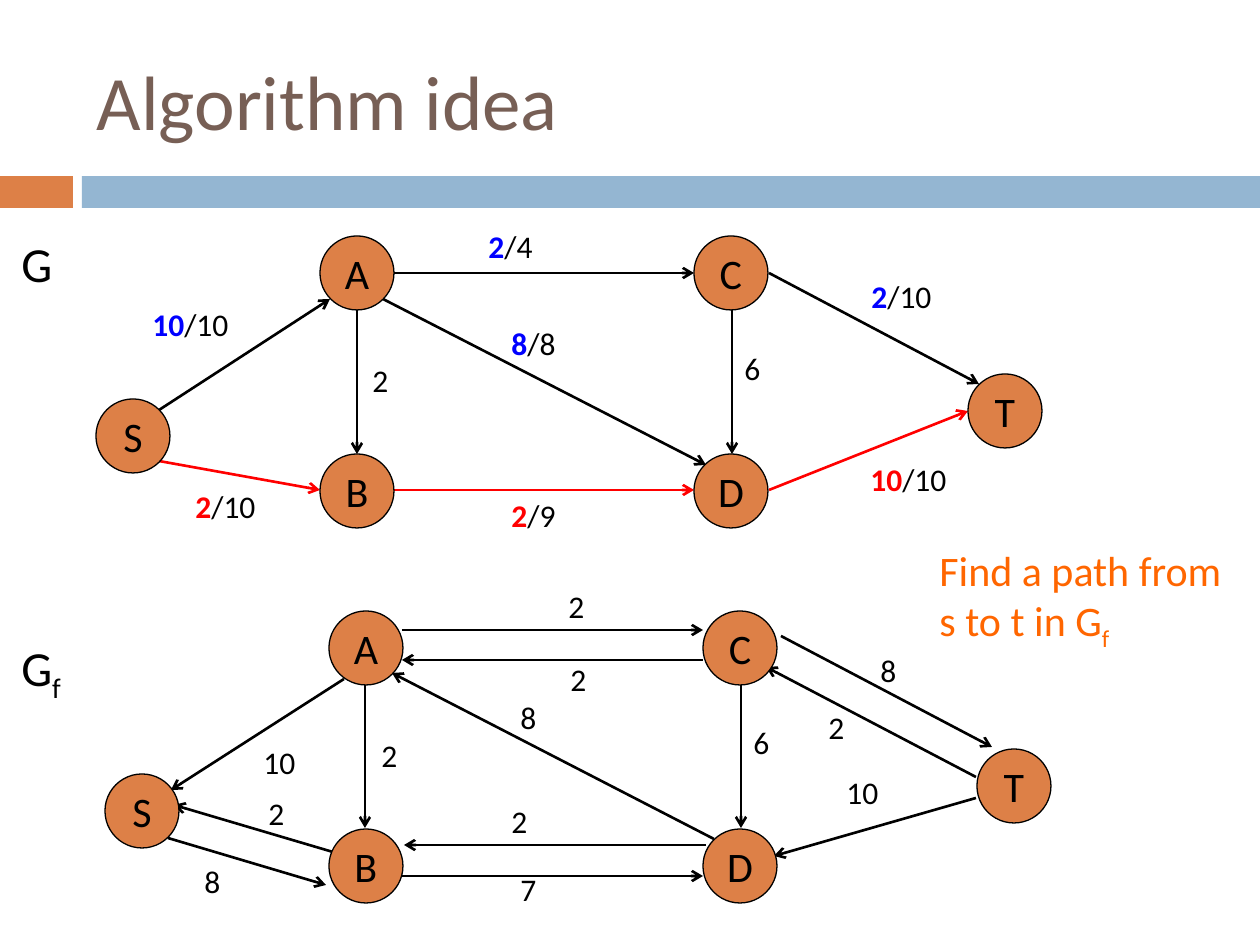
from lxml.etree import SubElement
from pptx import Presentation
from pptx.dml.color import RGBColor
from pptx.enum.shapes import MSO_CONNECTOR, MSO_SHAPE
from pptx.enum.text import MSO_ANCHOR, PP_ALIGN
from pptx.oxml.ns import qn
from pptx.util import Emu, Pt

HEX = {
    "orange": "DD8047", "sky": "94B6D2", "brown": "775F55", "black": "000000",
    "blue": "0000FF", "red": "FF0000", "hint": "FF6600",
}


def px(n):
    """Turn px, 126 to the inch, into EMU."""
    return Emu(round(n * 914400 / 126))


def write(frame, *runs, size=18, color="black", align=PP_ALIGN.LEFT,
          anchor=MSO_ANCHOR.TOP, wrap=True):
    """Fill a frame with runs: a string, or (string, format); a newline breaks."""
    frame.word_wrap = wrap
    frame.vertical_anchor = anchor
    para = frame.paragraphs[0]
    para.alignment = align
    for part in runs:
        words, form = (part, {}) if isinstance(part, str) else part
        if words == "\n":
            para.add_line_break()
            continue
        run = para.add_run()
        run.text = words
        run.font.name = "Calibri"
        run.font.size = Pt(size)
        run.font.bold = form.get("bold", False)
        run.font.color.rgb = RGBColor.from_string(HEX[form.get("color", color)])
        if form.get("sub"):
            run.font._element.set("baseline", "-25000")


deck = Presentation()
deck.slide_width, deck.slide_height = px(1260), px(945)
slide = deck.slides.add_slide(deck.slide_layouts[5])
shapes = slide.shapes

# Title and the band below it
title = shapes.title
title.left, title.top, title.width, title.height = map(px, (84, 32, 1124, 136))
write(title.text_frame, "Algorithm idea", size=44, color="brown",
      anchor=MSO_ANCHOR.MIDDLE)

for left, width, color in [(0, 73, "orange"), (82, 1178, "sky")]:
    bar = shapes.add_shape(MSO_SHAPE.RECTANGLE, px(left), px(176), px(width), px(32))
    bar.shadow.inherit = False
    bar.fill.solid()
    bar.fill.fore_color.rgb = RGBColor.from_string(HEX[color])
    bar.line.fill.background()

# Graph names and the hint
SUB = ("f", {"sub": True})
notes = [
    (9, 227, 111, 72, ["G"], 28, "black"),
    (9, 631, 111, 72, ["G", SUB], 28, "black"),
    (927, 538, 333, 115, ["Find a path from", "\n", "s to t in G", SUB], 24, "hint"),
]
for x, y, w, h, runs, size, color in notes:
    box = shapes.add_textbox(px(x), px(y), px(w), px(h))
    write(box.text_frame, *runs, size=size, color=color)

# Edges, each pointing from its first point to its second
flow = [
    (159, 410, 330, 299, "black"),  # S to A
    (159, 461, 320, 490, "red"),    # S to B
    (393, 490, 694, 490, "red"),    # B to D
    (357, 310, 357, 454, "black"),  # A to B
    (393, 273, 694, 273, "black"),  # A to C
    (732, 310, 732, 454, "black"),  # C to D
    (383, 299, 706, 465, "black"),  # A to D
    (769, 273, 979, 384, "black"),  # C to T
    (769, 490, 968, 411, "red"),    # D to T
]
rest = [
    (168, 838, 326, 885),  # S to B
    (333, 852, 174, 805),  # B to S
    (402, 876, 703, 876),  # B to D
    (706, 845, 404, 845),  # D to B
    (365, 684, 365, 828),  # A to B
    (402, 630, 703, 630),  # A to C
    (703, 660, 402, 660),  # C to A
    (741, 684, 741, 828),  # C to D
    (714, 839, 392, 673),  # D to A
    (781, 636, 992, 747),  # C to T
    (976, 777, 766, 667),  # T to C
    (976, 798, 774, 856),  # T to D
    (344, 679, 171, 790),  # A to S
]
for *ends, color in flow + [(*ends, "black") for ends in rest]:
    edge = shapes.add_connector(MSO_CONNECTOR.STRAIGHT, *map(px, ends))
    edge.line.width = Pt(1.5)
    edge.line.color.rgb = RGBColor.from_string(HEX[color])
    SubElement(edge.line._get_or_add_ln(), qn("a:tailEnd"), type="arrow")
    SubElement(edge._element.spPr, qn("a:effectLst"))

# Nodes: the lower graph is the upper one, shifted
nodes = {"S": (96, 399), "A": (320, 236), "B": (320, 454),
         "C": (694, 236), "D": (694, 454), "T": (968, 374)}
for dx, dy in [(0, 0), (9, 375)]:
    for name, (x, y) in nodes.items():
        node = shapes.add_shape(MSO_SHAPE.OVAL, px(x + dx), px(y + dy), px(74), px(74))
        node.shadow.inherit = False
        node.fill.solid()
        node.fill.fore_color.rgb = RGBColor.from_string(HEX["orange"])
        node.line.color.rgb = RGBColor.from_string(HEX["black"])
        node.line.width = Pt(0.75)
        write(node.text_frame, name, size=24, align=PP_ALIGN.CENTER,
              anchor=MSO_ANCHOR.MIDDLE, wrap=False)

# Edge labels: used flow in bold colour, then capacity
used = [
    (140, 299, 120, "10", "/10", "blue"),
    (476, 221, 117, "2", "/4", "blue"),
    (499, 318, 120, "8", "/8", "blue"),
    (859, 271, 120, "2", "/10", "blue"),
    (183, 481, 95, "2", "/10", "red"),
    (499, 490, 95, "2", "/9", "red"),
    (858, 454, 120, "10", "/10", "red"),
]
plain = [
    (360, 355, 95, "2"), (732, 343, 95, "6"),
    (508, 864, 95, "7"), (192, 856, 95, "8"), (556, 581, 117, "2"),
    (369, 730, 95, "2"), (741, 717, 95, "6"), (868, 645, 120, "8"),
    (508, 692, 120, "8"), (834, 767, 120, "10"), (251, 737, 95, "10"),
    (558, 654, 117, "2"), (816, 702, 120, "2"), (256, 788, 95, "2"),
    (499, 796, 95, "2"),
]
labels = [(x, y, w, [(now, {"bold": True, "color": color}), cap])
          for x, y, w, now, cap, color in used]
labels += [(x, y, w, [cap]) for x, y, w, cap in plain]
for x, y, w, runs in labels:
    box = shapes.add_textbox(px(x), px(y), px(w), px(50))
    write(box.text_frame, *runs)

deck.save("out.pptx")
